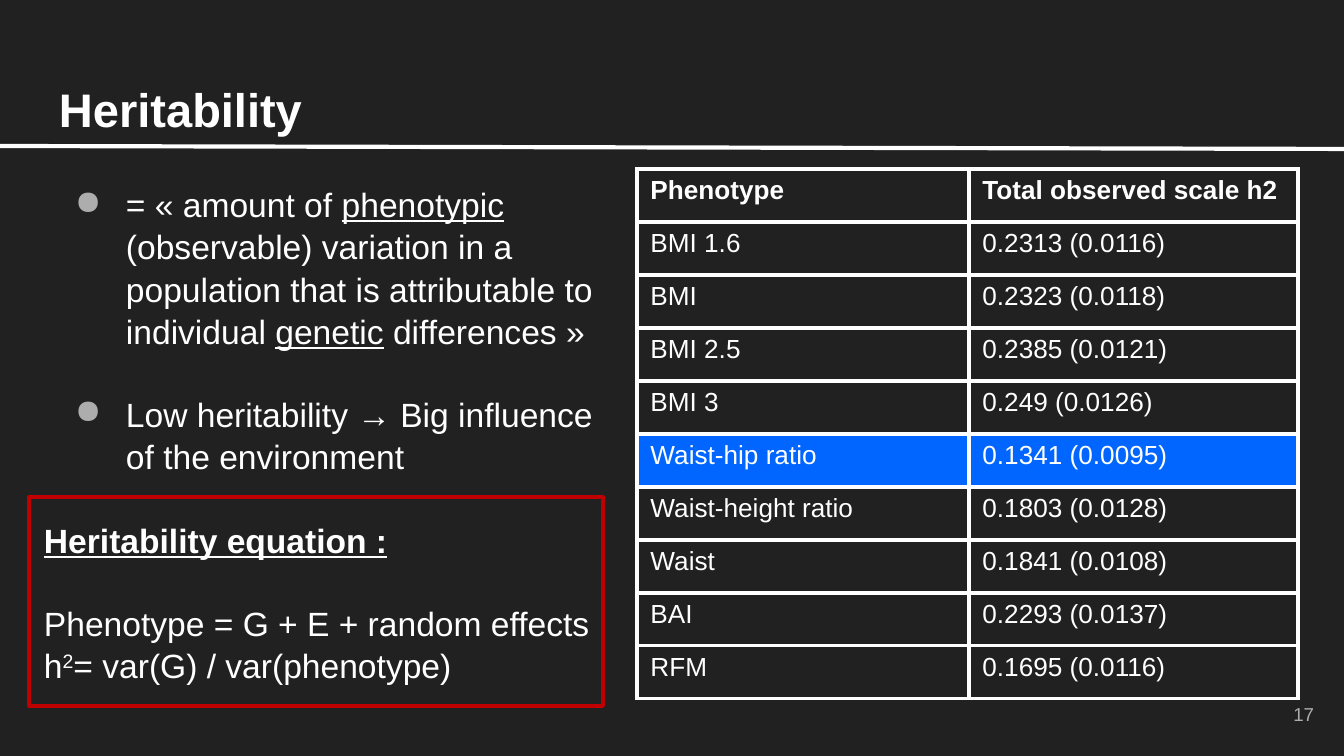
from dataclasses import dataclass

from lxml.etree import SubElement
from pptx import Presentation
from pptx.dml.color import RGBColor
from pptx.enum.shapes import MSO_CONNECTOR as Connector, MSO_SHAPE as Shape
from pptx.enum.text import MSO_ANCHOR as Anchor, MSO_AUTO_SIZE as AutoSize, PP_ALIGN as Align
from pptx.oxml.ns import qn
from pptx.util import Pt

EMU_PER_PX = 914400 / 134.4
TITLE_ONLY = 5


@dataclass(frozen=True)
class Theme:
    font: str = "Arial"
    background: str = "212121"
    text: str = "FFFFFF"
    muted: str = "ADADAD"
    highlight: str = "0066FF"
    frame: str = "C00000"
    title_size: float = 25.2
    body_size: float = 18
    table_size: float = 14
    number_size: float = 10
    line_width: float = 2.25
    line_spacing: float = 1.05
    paragraph_gap: float = 21.7


THEME = Theme()

HERITABILITY = [
    ("Phenotype", "Total observed scale h2"),
    ("BMI 1.6", "0.2313 (0.0116)"),
    ("BMI", "0.2323 (0.0118)"),
    ("BMI 2.5", "0.2385 (0.0121)"),
    ("BMI 3", "0.249 (0.0126)"),
    ("Waist-hip ratio", "0.1341 (0.0095)"),
    ("Waist-height ratio", "0.1803 (0.0128)"),
    ("Waist", "0.1841 (0.0108)"),
    ("BAI", "0.2293 (0.0137)"),
    ("RFM", "0.1695 (0.0116)"),
]
HIGHLIGHTED_ROW = 5

DEFINITION = [
    [
        ("= « amount of ", ""),
        ("phenotypic", "u"),
        (" (observable) variation in a population that is attributable to individual ", ""),
        ("genetic", "u"),
        (" differences »", ""),
    ],
    [("Low heritability → Big influence of the environment", "")],
]
EQUATION = [
    [("Heritability equation :", "bu")],
    [("Phenotype = G + E + random effects", "")],
    [("h", ""), ("2", "^"), ("= var(G) / var(phenotype)", "")],
]


def px(length):
    return round(length * EMU_PER_PX)


def color(value):
    return RGBColor.from_string(value)


def add_run(paragraph, text, size, marks="", ink=THEME.text):
    run = paragraph.add_run()
    run.text = text
    font = run.font
    font.name, font.size = THEME.font, Pt(size)
    font.color.rgb = color(ink)
    font.bold, font.underline = "b" in marks, "u" in marks
    if "^" in marks:
        run._r.get_or_add_rPr().set("baseline", "30000")


def set_margins(frame, horizontal, vertical):
    frame.margin_left = frame.margin_right = px(horizontal)
    frame.margin_top = frame.margin_bottom = px(vertical)


def add_bullet(paragraph):
    properties = paragraph._p.get_or_add_pPr()
    properties.set("marL", str(px(67)))
    properties.set("indent", str(-px(51)))
    bullet_color = SubElement(properties, qn("a:buClr"))
    SubElement(bullet_color, qn("a:srgbClr"), val=THEME.muted)
    SubElement(properties, qn("a:buChar"), char="●")


def add_title(slide, text):
    title = slide.shapes.title
    title.left, title.top, title.width, title.height = map(px, (46, 66, 1253, 84))
    frame = title.text_frame
    frame.auto_size, frame.vertical_anchor = AutoSize.NONE, Anchor.BOTTOM
    set_margins(frame, 13, 13)
    paragraph = frame.paragraphs[0]
    paragraph.alignment = Align.LEFT
    add_run(paragraph, text, THEME.title_size, "b")


def add_text_box(slide, box, margins):
    frame = slide.shapes.add_textbox(*map(px, box)).text_frame
    frame.word_wrap = True
    set_margins(frame, *margins)
    return frame


def add_paragraphs(frame, paragraphs, bulleted=False):
    for index, runs in enumerate(paragraphs):
        paragraph = frame.add_paragraph() if index else frame.paragraphs[0]
        paragraph.line_spacing = THEME.line_spacing
        if index == 1:
            paragraph.space_before = Pt(THEME.paragraph_gap)
        if bulleted:
            add_bullet(paragraph)
        for text, marks in runs:
            add_run(paragraph, text, THEME.body_size, marks)


def add_rule(slide, start, end):
    rule = slide.shapes.add_connector(Connector.STRAIGHT, *map(px, start + end))
    rule.line.color.rgb = color(THEME.text)
    rule.line.width = Pt(THEME.line_width)
    SubElement(rule._element.spPr, qn("a:effectLst"))


def add_frame(slide, box):
    frame = slide.shapes.add_shape(Shape.RECTANGLE, *map(px, box))
    frame.shadow.inherit = False
    frame.fill.background()
    frame.line.color.rgb = color(THEME.frame)
    frame.line.width = Pt(THEME.line_width)


def add_borders(cell):
    properties = cell._tc.get_or_add_tcPr()
    for side in ("lnL", "lnR", "lnT", "lnB"):
        border = SubElement(properties, qn(f"a:{side}"), w=str(Pt(THEME.line_width)))
        fill = SubElement(border, qn("a:solidFill"))
        SubElement(fill, qn("a:srgbClr"), val=THEME.text)


def add_heritability_table(slide, left, top, widths, row_height):
    row_count = len(HERITABILITY)
    box = (left, top, sum(widths), row_height * row_count)
    table = slide.shapes.add_table(row_count, len(widths), *map(px, box)).table
    table.first_row = table.horz_banding = False
    for column, width in zip(table.columns, widths):
        column.width = px(width)
    for index, (row, texts) in enumerate(zip(table.rows, HERITABILITY)):
        row.height = px(row_height)
        for cell, text in zip(row.cells, texts):
            add_borders(cell)
            if index == HIGHLIGHTED_ROW:
                cell.fill.solid()
                cell.fill.fore_color.rgb = color(THEME.highlight)
            else:
                cell.fill.background()
            marks = "" if index else "b"
            add_run(cell.text_frame.paragraphs[0], text, THEME.table_size, marks)


def add_slide_number(slide, number):
    frame = add_text_box(slide, (1246, 685, 81, 58), (13, 13))
    frame.vertical_anchor = Anchor.MIDDLE
    paragraph = frame.paragraphs[0]
    paragraph.alignment = Align.RIGHT
    add_run(paragraph, number, THEME.number_size, ink=THEME.muted)


def main():
    presentation = Presentation()
    presentation.slide_width, presentation.slide_height = px(1344), px(756)
    slide = presentation.slides.add_slide(presentation.slide_layouts[TITLE_ONLY])
    slide.background.fill.solid()
    slide.background.fill.fore_color.rgb = color(THEME.background)

    add_title(slide, "Heritability")
    definition = add_text_box(slide, (46, 169, 581, 362), (13, 13))
    add_paragraphs(definition, DEFINITION, bulleted=True)
    add_rule(slide, (0, 146), (1344, 149))
    add_heritability_table(slide, 637, 169, (332, 329), 53)
    add_slide_number(slide, "17")
    add_frame(slide, (29, 497, 574, 209))
    equation = add_text_box(slide, (31, 511, 594, 176), (13, 7))
    add_paragraphs(equation, EQUATION)
    presentation.save("out.pptx")


if __name__ == "__main__":
    main()
